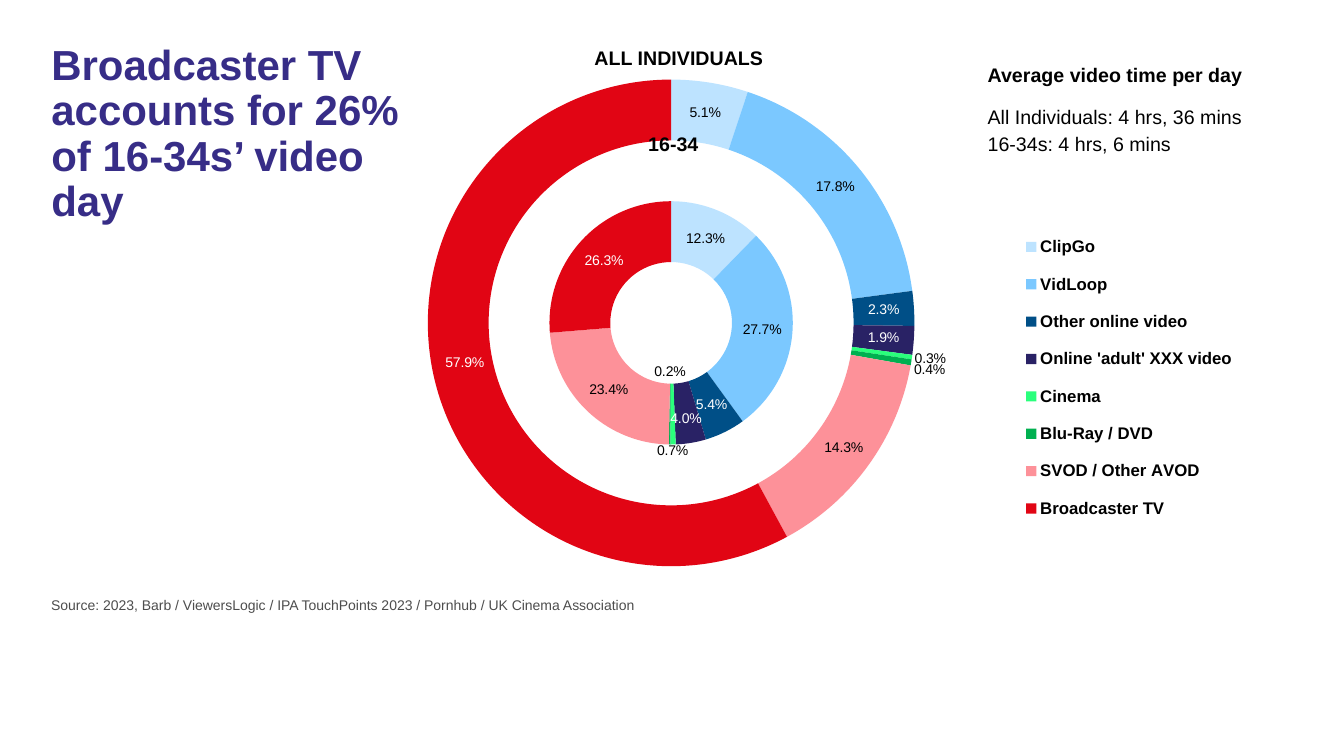
from lxml import etree
from pptx import Presentation
from pptx.chart.data import CategoryChartData
from pptx.dml.color import RGBColor
from pptx.enum.chart import XL_CHART_TYPE, XL_LEGEND_POSITION
from pptx.enum.text import MSO_ANCHOR, MSO_AUTO_SIZE, PP_ALIGN
from pptx.oxml.ns import qn
from pptx.util import Cm, Pt

RING = XL_CHART_TYPE.DOUGHNUT
RIGHT = XL_LEGEND_POSITION.RIGHT
LEFT, CENTER = PP_ALIGN.LEFT, PP_ALIGN.CENTER
TOP = MSO_ANCHOR.TOP
FIXED = MSO_AUTO_SIZE.NONE

BLACK = RGBColor(0x00, 0x00, 0x00)
WHITE = RGBColor(0xFF, 0xFF, 0xFF)
GREY = RGBColor(0x4D, 0x4D, 0x4D)
PURPLE = RGBColor(0x37, 0x2D, 0x87)
ICE = RGBColor(0xBD, 0xE3, 0xFF)
SKY = RGBColor(0x7B, 0xC8, 0xFF)
NAVY = RGBColor(0x00, 0x4F, 0x87)
INDIGO = RGBColor(0x29, 0x22, 0x65)
LIME = RGBColor(0x2A, 0xFF, 0x7C)
GREEN = RGBColor(0x00, 0xB0, 0x50)
PINK = RGBColor(0xFD, 0x91, 0x99)
RED = RGBColor(0xE1, 0x05, 0x14)

# Category: slice colour, label colour, share of 16-34s, share of all
VIDEO = {
    "ClipGo": (ICE, BLACK, 12.3, 5.1),
    "VidLoop": (SKY, BLACK, 27.7, 17.8),
    "Other online video": (NAVY, WHITE, 5.4, 2.3),
    "Online 'adult' XXX video": (INDIGO, WHITE, 4.0, 1.9),
    "Cinema": (LIME, BLACK, 0.7, 0.3),
    "Blu-Ray / DVD": (GREEN, BLACK, 0.2, 0.4),
    "SVOD / Other AVOD": (PINK, BLACK, 23.4, 14.3),
    "Broadcaster TV": (RED, WHITE, 26.3, 57.9),
}
# Label shifts by (ring, slice), as shares of the chart size
SHIFTS = {
    (0, 3): (0, 0.01), (0, 4): (0, 0.06), (0, 5): (0, -0.07),
    (2, 4): (0.05, 0.01), (2, 5): (0.05, 0.02), (2, 7): (0, -0.02),
}
PERCENT = "0.0%"


def write(frame, text, size=14, color=BLACK, bold=False, align=LEFT, line=None):
    """Fill a text frame with one formatted paragraph."""
    frame.word_wrap = True
    frame.auto_size = FIXED
    frame.vertical_anchor = TOP
    para = frame.paragraphs[0]
    para.alignment = align
    para.line_spacing = line
    run = para.add_run()
    run.text = text
    style(run.font, size, color, bold)


def style(font, size, color, bold=False):
    font.name = "Arial"
    font.size = Pt(size)
    font.bold = bold
    font.color.rgb = color


def place(parent, index, **items):
    """Give a chart part a manual layout."""
    for old in parent.findall(qn("c:layout")):
        parent.remove(old)
    layout = etree.Element(qn("c:layout"))
    manual = etree.SubElement(layout, qn("c:manualLayout"))
    for tag, value in items.items():
        etree.SubElement(manual, qn("c:" + tag)).set("val", str(value))
    parent.insert(index, layout)


class Deck:
    def __init__(self):
        self.prs = Presentation()
        self.prs.slide_width, self.prs.slide_height = Cm(33.87), Cm(19.05)
        self.slide = self.prs.slides.add_slide(self.prs.slide_layouts[5])

    def title(self, text, x, y, w, h):
        shape = self.slide.shapes.title
        shape.left, shape.top, shape.width, shape.height = map(Cm, (x, y, w, h))
        write(shape.text_frame, text, size=30, color=PURPLE, bold=True, line=0.9)

    def text(self, text, x, y, w, h=0.86, **form):
        box = self.slide.shapes.add_textbox(*map(Cm, (x, y, w, h)))
        write(box.text_frame, text, **form)

    def rings(self, x, y, w, h):
        data = CategoryChartData(number_format="General")
        data.categories = list(VIDEO)
        fills, inks, young, everyone = zip(*VIDEO.values())
        # The empty middle ring keeps the two groups apart
        for num, shares in enumerate((young, [None] * len(VIDEO), everyone), 1):
            data.add_series(f"Series {num}", shares)
        frame = self.slide.shapes.add_chart(RING, *map(Cm, (x, y, w, h)), data)
        chart = frame.chart
        chart.has_title = False
        style(chart.font, 18, BLACK)
        plot = chart.plots[0]
        plot.vary_by_categories = True
        area = chart.element.find(".//" + qn("c:plotArea"))
        area.find(".//" + qn("c:holeSize")).set("val", "47")
        place(area, 0, layoutTarget="inner", xMode="edge", yMode="edge",
              x=0.11, y=0.095, w=0.503, h=0.811)
        self.legend(chart)
        for num in (0, 2):
            self.ring(plot.series[num], num, fills, inks)

    def legend(self, chart):
        chart.has_legend = True
        key = chart.legend
        key.position = RIGHT
        key.include_in_layout = False
        style(key.font, 12, BLACK, bold=True)
        place(key._element, 1, xMode="edge", yMode="edge",
              x=0.7, y=0.33, w=0.27, h=0.52)

    def ring(self, series, num, fills, inks):
        labels = series.data_labels
        labels.show_percentage = True
        labels.show_value = False
        labels.number_format = PERCENT
        labels.number_format_is_linked = False
        style(labels.font, 10, WHITE)
        for pos, (fill, ink) in enumerate(zip(fills, inks)):
            point = series.points[pos]
            point.format.fill.solid()
            point.format.fill.fore_color.rgb = fill
            style(point.data_label.font, 10, ink)
        # Each slice label shows its percentage, moved where needed
        for pos, label in enumerate(labels._element.findall(qn("c:dLbl"))):
            label.find(qn("c:showVal")).set("val", "0")
            label.find(qn("c:showPercent")).set("val", "1")
            form = etree.Element(qn("c:numFmt"), formatCode=PERCENT, sourceLinked="0")
            label.insert(1, form)
            if (num, pos) in SHIFTS:
                dx, dy = SHIFTS[num, pos]
                place(label, 1, x=dx, y=dy)


def main():
    deck = Deck()
    # Chart and title
    deck.rings(8.1, 0.41, 24.38, 15.44)
    deck.title("Broadcaster TV accounts for 26% of 16-34s’ video day", 1.04, 0.99, 9.7, 7.01)
    # Average times
    deck.text("Average video time per day", 24.64, 1.47, 9.2, bold=True)
    deck.text("All Individuals: 4 hrs, 36 mins", 24.64, 2.51, 7.59)
    deck.text("16-34s: 4 hrs, 6 mins", 24.64, 3.2, 5.77)
    # Ring names
    deck.text("ALL INDIVIDUALS", 14.66, 1.02, 4.9, bold=True, align=CENTER)
    deck.text("16-34", 15.47, 3.2, 3, bold=True, align=CENTER)
    # Source line
    deck.text("Source: 2023, Barb / ViewersLogic / IPA TouchPoints 2023 / Pornhub / "
              "UK Cinema Association", 1.04, 14.91, 31.5, size=10, color=GREY)
    deck.prs.save("out.pptx")


if __name__ == "__main__":
    main()
